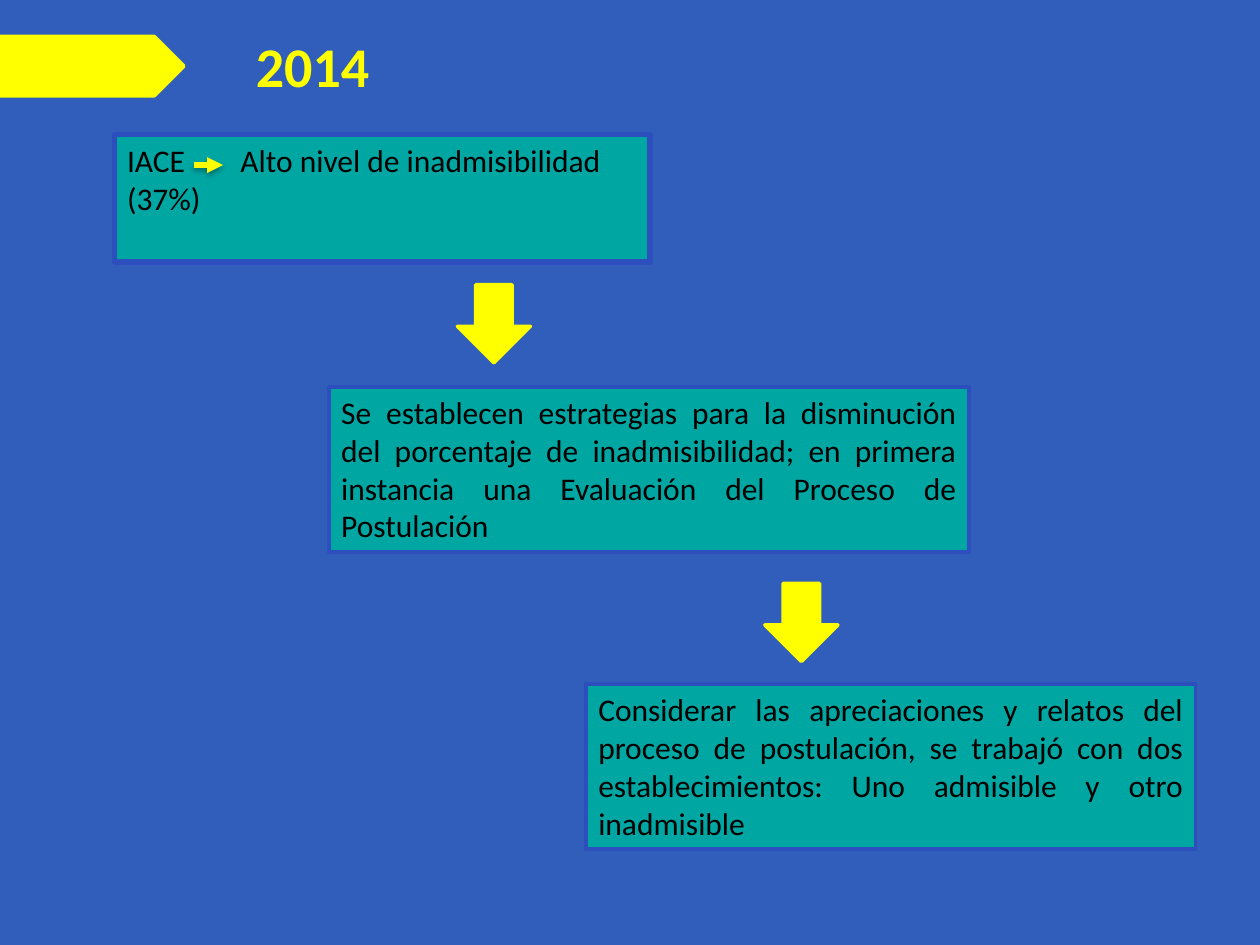
from dataclasses import dataclass

from lxml.etree import SubElement
from pptx import Presentation
from pptx.dml.color import RGBColor
from pptx.enum.shapes import MSO_CONNECTOR, MSO_SHAPE
from pptx.enum.text import MSO_ANCHOR, MSO_AUTO_SIZE, PP_ALIGN
from pptx.oxml.ns import qn
from pptx.util import Inches, Pt

BLUE, TEAL, EDGE = "305EBA", "00A6A2", "2D4FBD"
GOLD, BLACK = "FFFF00", "000000"


@dataclass
class Box:
    left: float
    top: float
    width: float
    height: float
    edge: float
    align: PP_ALIGN
    text: str


@dataclass
class Mark:
    kind: MSO_SHAPE
    left: float
    top: float
    width: float
    height: float


BOXES = [
    Box(0.91, 1.07, 4.25, 1.01, 3, PP_ALIGN.LEFT,
        "IACE\tAlto nivel de inadmisibilidad (37%)"),
    Box(2.61, 3.07, 5.08, 1.31, 2, PP_ALIGN.JUSTIFY,
        "Se establecen estrategias para la disminución del porcentaje de "
        "inadmisibilidad; en primera instancia una Evaluación del Proceso "
        "de Postulación"),
    Box(4.65, 5.43, 4.84, 1.31, 2, PP_ALIGN.JUSTIFY,
        "Considerar las apreciaciones y relatos del proceso de postulación, "
        "se trabajó con dos establecimientos: Uno admisible y otro "
        "inadmisible"),
]
MARKS = [
    Mark(MSO_SHAPE.PENTAGON, 0, 0.29, 1.46, 0.47),
    Mark(MSO_SHAPE.DOWN_ARROW, 3.63, 2.26, 0.58, 0.62),
    Mark(MSO_SHAPE.DOWN_ARROW, 6.07, 4.63, 0.58, 0.62),
]


def paint(color, tone: str) -> None:
    color.rgb = RGBColor.from_string(tone)


def write(shape, text: str, size: float, tone: str, align: PP_ALIGN,
          bold: bool = False) -> None:
    frame = shape.text_frame
    frame.text = text
    frame.word_wrap = True
    frame.auto_size = MSO_AUTO_SIZE.NONE
    frame.vertical_anchor = MSO_ANCHOR.TOP
    line = frame.paragraphs[0]
    line.alignment = align
    for run in line.runs:
        run.font.name = "Calibri"
        run.font.size = Pt(size)
        run.font.bold = bold
        paint(run.font.color, tone)


def draw(slide, kind: MSO_SHAPE, item: Box | Mark, fill: str, edge: str,
         width: float):
    shape = slide.shapes.add_shape(
        kind, Inches(item.left), Inches(item.top),
        Inches(item.width), Inches(item.height))
    shape.shadow.inherit = False
    shape.fill.solid()
    paint(shape.fill.fore_color, fill)
    paint(shape.line.color, edge)
    shape.line.width = Pt(width)
    return shape


def add_box(slide, box: Box) -> None:
    shape = draw(slide, MSO_SHAPE.RECTANGLE, box, TEAL, EDGE, box.edge)
    write(shape, box.text, 18, BLACK, box.align)
    if "\t" in box.text:
        props = shape.text_frame.paragraphs[0]._p.get_or_add_pPr()
        tabs = SubElement(props, qn("a:tabLst"))
        SubElement(tabs, qn("a:tab"), pos=str(Inches(0.9)), algn="l")


def add_arrow(slide, left: float, right: float, top: float) -> None:
    arrow = slide.shapes.add_connector(
        MSO_CONNECTOR.STRAIGHT, Inches(left), Inches(top),
        Inches(right), Inches(top))
    paint(arrow.line.color, GOLD)
    arrow.line.width = Pt(3)
    SubElement(arrow.line._get_or_add_ln(), qn("a:tailEnd"), type="triangle")
    props = arrow._element.spPr
    effect = SubElement(props, qn("a:effectLst"))
    shade = SubElement(effect, qn("a:outerShdw"), blurRad=str(Pt(3.1)),
                       dist=str(Pt(1.8)), dir="5400000", rotWithShape="0")
    color = SubElement(shade, qn("a:srgbClr"), val=BLACK)
    SubElement(color, qn("a:alpha"), val="35000")


def main() -> None:
    deck = Presentation()
    deck.slide_width, deck.slide_height = Inches(10), Inches(7.5)
    slide = deck.slides.add_slide(deck.slide_layouts[5])
    back = slide.background.fill
    back.solid()
    paint(back.fore_color, BLUE)

    title = slide.shapes.title
    title.left, title.top = Inches(1.93), Inches(0.2)
    title.width, title.height = Inches(3.07), Inches(0.64)
    write(title, "2014", 32, GOLD, PP_ALIGN.LEFT, True)

    for box in BOXES:
        add_box(slide, box)
    for mark in MARKS:
        draw(slide, mark.kind, mark, GOLD, GOLD, 2)
    add_arrow(slide, 1.54, 1.77, 1.31)
    deck.save("out.pptx")


if __name__ == "__main__":
    main()
